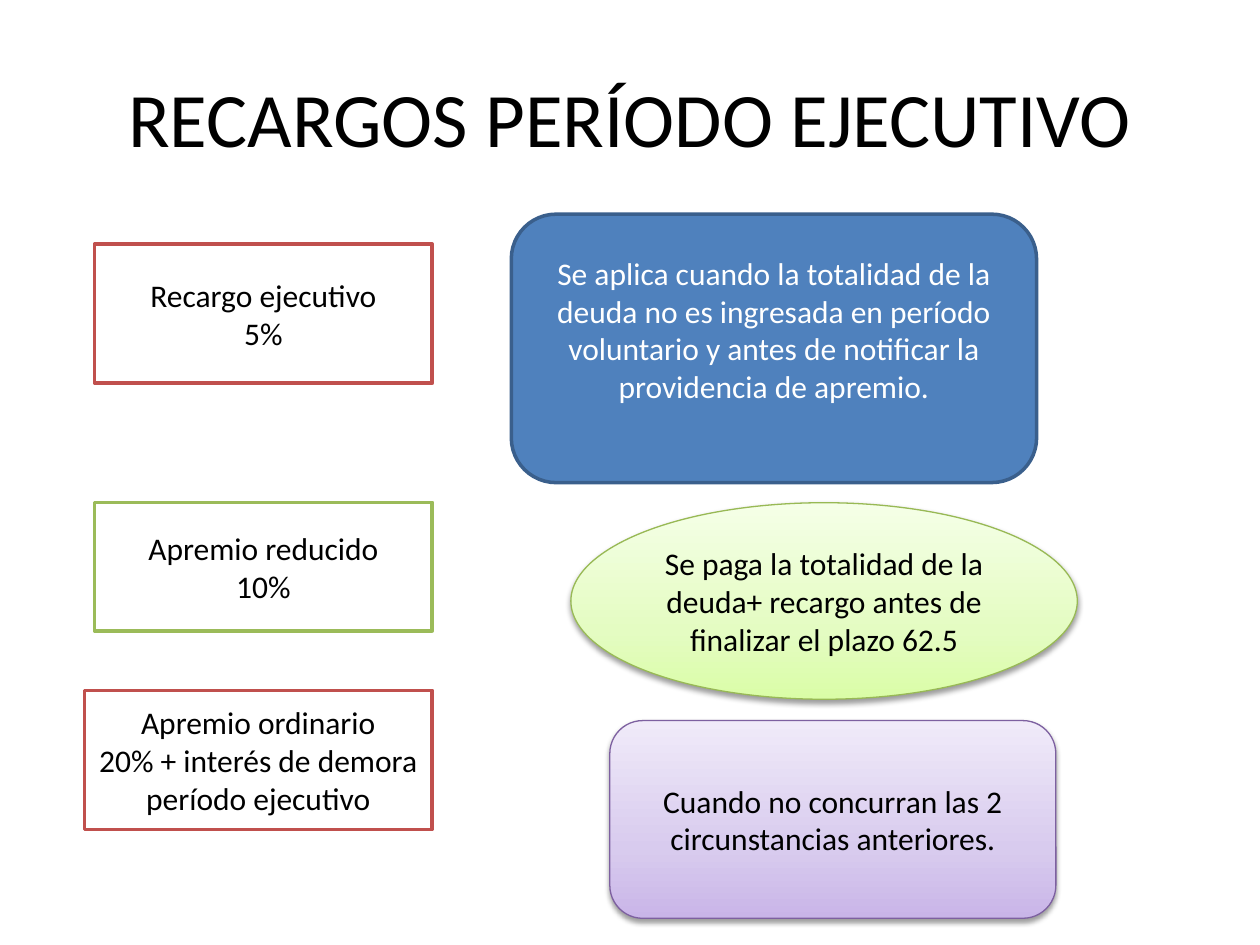
from lxml.etree import SubElement
from pptx import Presentation
from pptx.dml.color import RGBColor as RGB
from pptx.enum.shapes import MSO_SHAPE as Form
from pptx.enum.text import MSO_ANCHOR as Anchor, PP_ALIGN as Align
from pptx.oxml.ns import qn
from pptx.util import Pt

# Colours
BLACK = RGB(0, 0, 0)
WHITE = RGB(255, 255, 255)
RED = RGB(0xC0, 0x50, 0x4D)
GREEN = RGB(0x9B, 0xBB, 0x59)
BLUE = RGB(0x4F, 0x81, 0xBD)
NAVY = RGB(0x3A, 0x5F, 0x8C)
OLIVE = RGB(0x98, 0xB9, 0x55)
PURPLE = RGB(0x7D, 0x60, 0xA0)

# Gradients: colours from bottom to top
STOPS = (0, 35, 100)
LIME = (RGB(0xDA, 0xFD, 0xA7), RGB(0xE4, 0xFC, 0xC2), RGB(0xF5, 0xFF, 0xE7))
LILAC = (RGB(0xC9, 0xB5, 0xE8), RGB(0xD8, 0xCB, 0xEE), RGB(0xF0, 0xEA, 0xF9))


class Sheet:
    font = "Calibri"
    size = 18

    def __init__(self, slide):
        self.slide = slide

    def label(self, shape, lines, color, size):
        frame = shape.text_frame
        frame.word_wrap = True
        frame.vertical_anchor = Anchor.MIDDLE
        frame.text = "\n".join(lines)
        for par in frame.paragraphs:
            par.alignment = Align.CENTER
            par.font.name = self.font
            par.font.size = Pt(size)
            par.font.color.rgb = color

    def title(self, box, text):
        shape = self.slide.shapes.add_textbox(*map(Pt, box))
        self.label(shape, [text], BLACK, 44)

    def block(self, form, box, lines, fill, edge, color=BLACK, width=2):
        shape = self.slide.shapes.add_shape(form, *map(Pt, box))
        shape.shadow.inherit = False
        shape.fill.solid()
        shape.fill.fore_color.rgb = fill
        shape.line.color.rgb = edge
        shape.line.width = Pt(width)
        self.label(shape, lines, color, self.size)
        return shape

    def glow(self, form, box, text, colors, edge):
        shape = self.block(form, box, [text], WHITE, edge, width=0.75)
        shape.fill.gradient()
        shape.fill.gradient_angle = 90
        props = shape.element.spPr
        stops = props.find(".//" + qn("a:gsLst"))
        stops.clear()
        for pos, color in zip(STOPS, colors):
            stop = SubElement(stops, qn("a:gs"), pos=str(pos * 1000))
            SubElement(stop, qn("a:srgbClr"), val=str(color))
        self.shade(props.find(qn("a:effectLst")))

    def shade(self, effects):
        shadow = SubElement(
            effects, qn("a:outerShdw"), blurRad=str(Pt(3.1)), dist=str(Pt(1.6)),
            dir="5400000", rotWithShape="0")
        color = SubElement(shadow, qn("a:srgbClr"), val=str(BLACK))
        SubElement(color, qn("a:alpha"), val="38000")


def main():
    deck = Presentation()
    deck.slide_width, deck.slide_height = Pt(720), Pt(540)
    sheet = Sheet(deck.slides.add_slide(deck.slide_layouts[6]))

    sheet.title((36, 21.6, 648, 90), "RECARGOS PERÍODO EJECUTIVO")

    # Surcharges on the left
    for box, edge, lines in (
        ((54, 139.5, 193, 79.5), RED, ["Recargo ejecutivo", "5%"]),
        ((54, 287, 193, 73.5), GREEN, ["Apremio reducido", "10%"]),
        ((48.2, 394.5, 198.8, 79.5), RED,
         ["Apremio ordinario", "20% + interés de demora período ejecutivo"]),
    ):
        sheet.block(Form.RECTANGLE, box, lines, WHITE, edge)

    # Conditions on the right
    rule = sheet.block(
        Form.ROUNDED_RECTANGLE, (292.2, 122.4, 300.2, 153.4),
        ["Se aplica cuando la totalidad de la deuda no es ingresada en período "
         "voluntario y antes de notificar la providencia de apremio."],
        BLUE, NAVY, WHITE)
    rule.text_frame.margin_bottom = Pt(25.2)
    sheet.glow(
        Form.OVAL, (326.2, 287.3, 289.4, 112.3),
        "Se paga la totalidad de la deuda+ recargo antes de finalizar el plazo 62.5",
        LIME, OLIVE)
    sheet.glow(
        Form.ROUNDED_RECTANGLE, (348.5, 411.8, 254.9, 113),
        "Cuando no concurran las 2 circunstancias anteriores.",
        LILAC, PURPLE)

    deck.save("out.pptx")


if __name__ == "__main__":
    main()
